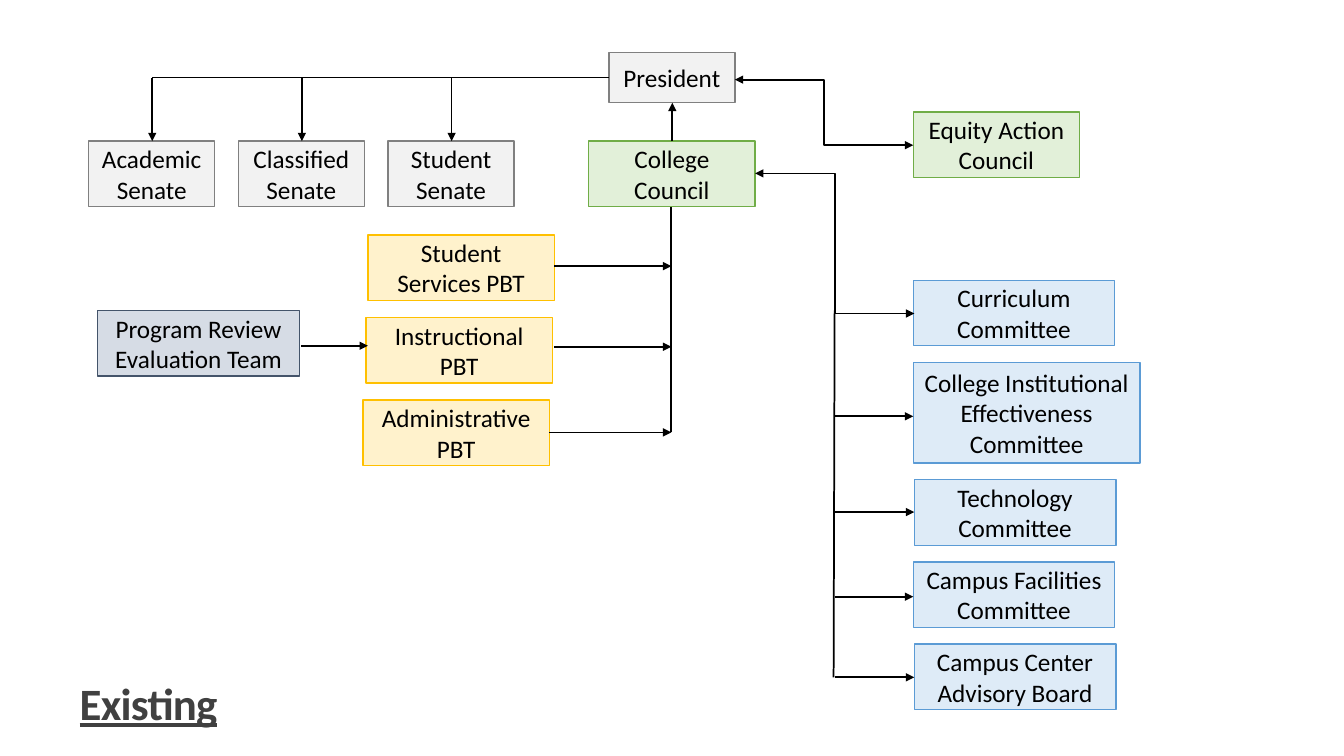
from dataclasses import dataclass

from lxml import etree
from pptx import Presentation
from pptx import util as u
from pptx.dml.color import RGBColor
from pptx.enum import shapes, text
from pptx.oxml.ns import qn


@dataclass(frozen=True)
class Theme:
    font: str = "Calibri"
    box_size: int = 18
    title_size: int = 32
    ink: str = "000000"
    title: str = "404040"
    gray: tuple = ("F2F2F2", "808080")
    green: tuple = ("E2F0D9", "70AD47")
    yellow: tuple = ("FFF2CC", "FFC000")
    slate: tuple = ("D6DCE5", "44546A")
    blue: tuple = ("DEEBF7", "5B9BD5")


theme = Theme()
COLUMNS, ROWS = 133.33, 75
CELL = u.Inches(0.1)
BOX_HEIGHT = 6.5

presentation = Presentation()
presentation.slide_width = round(COLUMNS * CELL)
presentation.slide_height = ROWS * CELL
slide = presentation.slides.add_slide(presentation.slide_layouts[5])


def add_box(label, colors, left, top, width, height=BOX_HEIGHT):
    bounds = [round(n * CELL) for n in (left, top, width, height)]
    shape = slide.shapes.add_shape(shapes.MSO_SHAPE.RECTANGLE, *bounds)
    shape.shadow.inherit = False
    shape.fill.solid()
    shape.fill.fore_color.rgb = RGBColor.from_string(colors[0])
    shape.line.color.rgb = RGBColor.from_string(colors[1])
    shape.line.width = u.Pt(1)
    frame = shape.text_frame
    frame.word_wrap = True
    frame.vertical_anchor = text.MSO_ANCHOR.MIDDLE
    frame.text = label
    for paragraph in frame.paragraphs:
        paragraph.alignment = text.PP_ALIGN.CENTER
        paragraph.font.name = theme.font
        paragraph.font.size = u.Pt(theme.box_size)
        paragraph.font.color.rgb = RGBColor.from_string(theme.ink)


def add_line(start, end, arrows=("tailEnd",), kind=shapes.MSO_CONNECTOR.STRAIGHT):
    points = [round(n * CELL) for n in (*start, *end)]
    connector = slide.shapes.add_connector(kind, *points)
    connector.line.color.rgb = RGBColor.from_string(theme.ink)
    connector.line.width = u.Pt(1.25)
    for arrow in arrows:
        etree.SubElement(connector.line._get_or_add_ln(), qn(f"a:{arrow}"), type="triangle")
    etree.SubElement(connector._element.spPr, qn("a:effectLst"))


title = slide.shapes.title
title.left, title.top, title.width, title.height = [
    round(n * CELL) for n in (6.9, 66.9, 27, 6)
]
title.text_frame.text = "Existing"
title.text_frame.auto_size = text.MSO_AUTO_SIZE.NONE
title.text_frame.vertical_anchor = text.MSO_ANCHOR.BOTTOM
paragraph = title.text_frame.paragraphs[0]
paragraph.alignment = text.PP_ALIGN.LEFT
paragraph.line_spacing = 0.85
paragraph.font.name = theme.font
paragraph.font.size = u.Pt(theme.title_size)
paragraph.font.bold = True
paragraph.font.underline = True
paragraph.font.color.rgb = RGBColor.from_string(theme.title)
paragraph.runs[0]._r.get_or_add_rPr().set("spc", "-50")

add_box("President", theme.gray, 60.4, 5.2, 12.5, 5)
add_box("College Council", theme.green, 58.4, 14, 16.5)
add_box("Equity Action Council", theme.green, 90.6, 11.1, 16.5)
add_box("Program Review Evaluation Team", theme.slate, 9.7, 30.8, 20)

senate_row = 7.7
for index, name in enumerate(["Academic", "Classified", "Student"]):
    left = 8.8 + 14.85 * index
    add_box(f"{name}\nSenate", theme.gray, left, 14, 12.5)
    add_line((left + 6.3, senate_row), (left + 6.3, 14))
add_line((60.4, senate_row), (15.1, senate_row), arrows=())

council_column = 66.6
teams = [
    ("Student Services PBT", 36.5, 55, 26.4),
    ("Instructional PBT", 36.3, 55, 34.4),
    ("Administrative PBT", 36, 54.5, 42.9),
]
for index, (name, left, arrow_start, arrow_row) in enumerate(teams):
    add_box(name, theme.yellow, left, 23.3 + 8.2 * index, 18.5)
    add_line((arrow_start, arrow_row), (council_column, arrow_row))
add_line((council_column, 42.9), (council_column, 20.5), arrows=())
add_line((66.7, 14), (66.7, 10.2))
add_line((29.9, 34.3), (36.5, 34.3))

committee_column = 82.8
committees = [
    ("Curriculum Committee", 90.6, 20, BOX_HEIGHT, None),
    ("College Institutional Effectiveness Committee", 90.6, 22.5, 10, 41.3),
    ("Technology Committee", 90.7, 20, BOX_HEIGHT, 50.8),
    ("Campus Facilities Committee", 90.6, 20, BOX_HEIGHT, 59.2),
    ("Campus Center Advisory Board", 90.7, 20, BOX_HEIGHT, 67.2),
]
top = 27.8
for name, left, width, height, arrow_row in committees:
    add_box(name, theme.blue, left, top, width, height)
    if arrow_row:
        add_line((committee_column, arrow_row), (left, arrow_row))
    top += height + 1.65
add_line((82.7, 67.2), (committee_column, 30.8), arrows=())

for start, end in [((74.9, 17.2), (90.7, 31.1)), ((72.9, 7.9), (90.6, 14.4))]:
    add_line(start, end, ("headEnd", "tailEnd"), shapes.MSO_CONNECTOR.ELBOW)

presentation.save("out.pptx")
